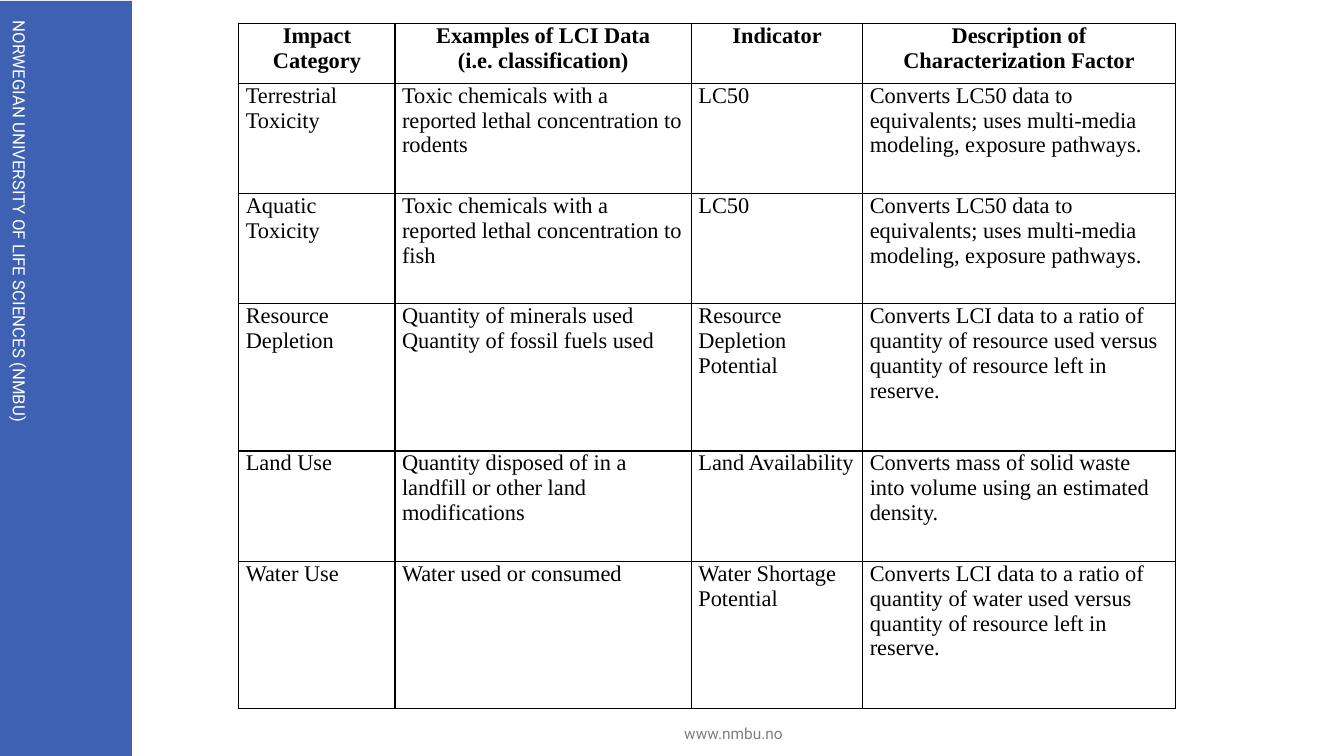
import pptx
import pptx.dml.color
import pptx.enum.shapes
import pptx.enum.text
import pptx.oxml
import pptx.oxml.ns
import pptx.util

Pt = pptx.util.Pt
ALIGN = pptx.enum.text.PP_ALIGN
ANCHOR = pptx.enum.text.MSO_ANCHOR
COLORS = {"blue": "3E61B3", "white": "FFFFFF", "grey": "808080", "black": "000000"}
COLUMN_WIDTHS = [111.6, 211.7, 122.4, 223.2]
ROW_HEIGHTS = [42.8, 78.8, 78.8, 105.2, 78.8, 105.2]
TOXICITY_FACTOR = "Converts LC50 data to equivalents; uses multi-media modeling, exposure pathways."
IMPACTS = [
    ["Impact Category", "Examples of LCI Data\n(i.e. classification)", "Indicator",
     "Description of Characterization Factor"],
    ["Terrestrial Toxicity", "Toxic chemicals with a reported lethal concentration to rodents",
     "LC50", TOXICITY_FACTOR],
    ["Aquatic Toxicity", "Toxic chemicals with a reported lethal concentration to fish",
     "LC50", TOXICITY_FACTOR],
    ["Resource Depletion", "Quantity of minerals used\nQuantity of fossil fuels used",
     "Resource Depletion Potential",
     "Converts LCI data to a ratio of quantity of resource used versus quantity of "
     "resource left in reserve."],
    ["Land Use", "Quantity disposed of in a landfill or other land modifications",
     "Land Availability",
     "Converts mass of solid waste into volume using an estimated density."],
    ["Water Use", "Water used or consumed", "Water Shortage Potential",
     "Converts LCI data to a ratio of quantity of water used versus quantity of "
     "resource left in reserve."],
]


def color(name):
    """Return the named colour."""
    return pptx.dml.color.RGBColor.from_string(COLORS[name])


def write_text(frame, text, *, font, size, ink, bold=False, align=ALIGN.LEFT):
    """Write each line of text as a formatted paragraph."""
    frame.word_wrap = True
    for index, line in enumerate(text.split("\n")):
        para = frame.add_paragraph() if index else frame.paragraphs[0]
        para.alignment = align
        span = para.add_run()
        span.text = line
        span.font.name = font
        span.font.size = Pt(size)
        span.font.bold = bold
        span.font.color.rgb = color(ink)


def add_sidebar(page, left, top, width, height):
    """Draw the blue band with the university name running down it."""
    band = page.shapes.add_shape(pptx.enum.shapes.MSO_SHAPE.RECTANGLE,
                                 Pt(left), Pt(top), Pt(width), Pt(height))
    band.shadow.inherit = False
    band.fill.solid()
    band.fill.fore_color.rgb = color("blue")
    band.line.fill.background()

    length, thickness = 293, 14.4
    center_x, center_y = left + 14, top + 160.6
    box = page.shapes.add_textbox(Pt(center_x - length / 2), Pt(center_y - thickness / 2),
                                  Pt(length), Pt(thickness))
    box.rotation = 90
    frame = box.text_frame
    frame.margin_left = frame.margin_right = frame.margin_top = frame.margin_bottom = 0
    frame.vertical_anchor = ANCHOR.MIDDLE
    write_text(frame, "NORWEGIAN UNIVERSITY OF LIFE SCIENCES (NMBU)",
               font="Roboto", size=12, ink="white")


def add_footer(page, left, top, width, height):
    """Write the centred web address."""
    box = page.shapes.add_textbox(Pt(left), Pt(top), Pt(width), Pt(height))
    write_text(box.text_frame, "www.nmbu.no", font="Roboto", size=11, ink="grey",
               align=ALIGN.CENTER)


def add_borders(cell):
    """Give a cell a thin black line on every side."""
    properties = cell._tc.get_or_add_tcPr()
    for side in ("lnL", "lnR", "lnT", "lnB"):
        properties.append(pptx.oxml.parse_xml(
            f'<a:{side} {pptx.oxml.ns.nsdecls("a")} w="{Pt(1)}"><a:solidFill>'
            f'<a:srgbClr val="{COLORS["black"]}"/></a:solidFill></a:{side}>'))


def add_impact_table(page, left, top):
    """Build the table of impact categories from its top left corner."""
    table = page.shapes.add_table(len(ROW_HEIGHTS), len(COLUMN_WIDTHS), Pt(left), Pt(top),
                                  Pt(sum(COLUMN_WIDTHS)), Pt(sum(ROW_HEIGHTS))).table
    table.first_row = table.horz_banding = False
    for column, width in zip(table.columns, COLUMN_WIDTHS):
        column.width = Pt(width)
    for row_index, (row, height) in enumerate(zip(table.rows, ROW_HEIGHTS)):
        row.height = Pt(height)
        header = row_index == 0
        for cell, text in zip(row.cells, IMPACTS[row_index]):
            cell.margin_left = cell.margin_right = Pt(5)
            cell.margin_top = cell.margin_bottom = 0
            add_borders(cell)
            cell.fill.background()
            write_text(cell.text_frame, text, font="Times New Roman", size=16, ink="black",
                       bold=header, align=ALIGN.CENTER if header else ALIGN.LEFT)


def main():
    """Build and save the deck."""
    deck = pptx.Presentation()
    deck.slide_width, deck.slide_height = Pt(960), Pt(540)
    page = deck.slides.add_slide(deck.slide_layouts[6])
    add_sidebar(page, 0, 0.7, 94.3, 539.3)
    add_footer(page, 424, 514, 200, 21)
    add_impact_table(page, 170.6, 16.6)
    deck.save("out.pptx")


if __name__ == "__main__":
    main()
